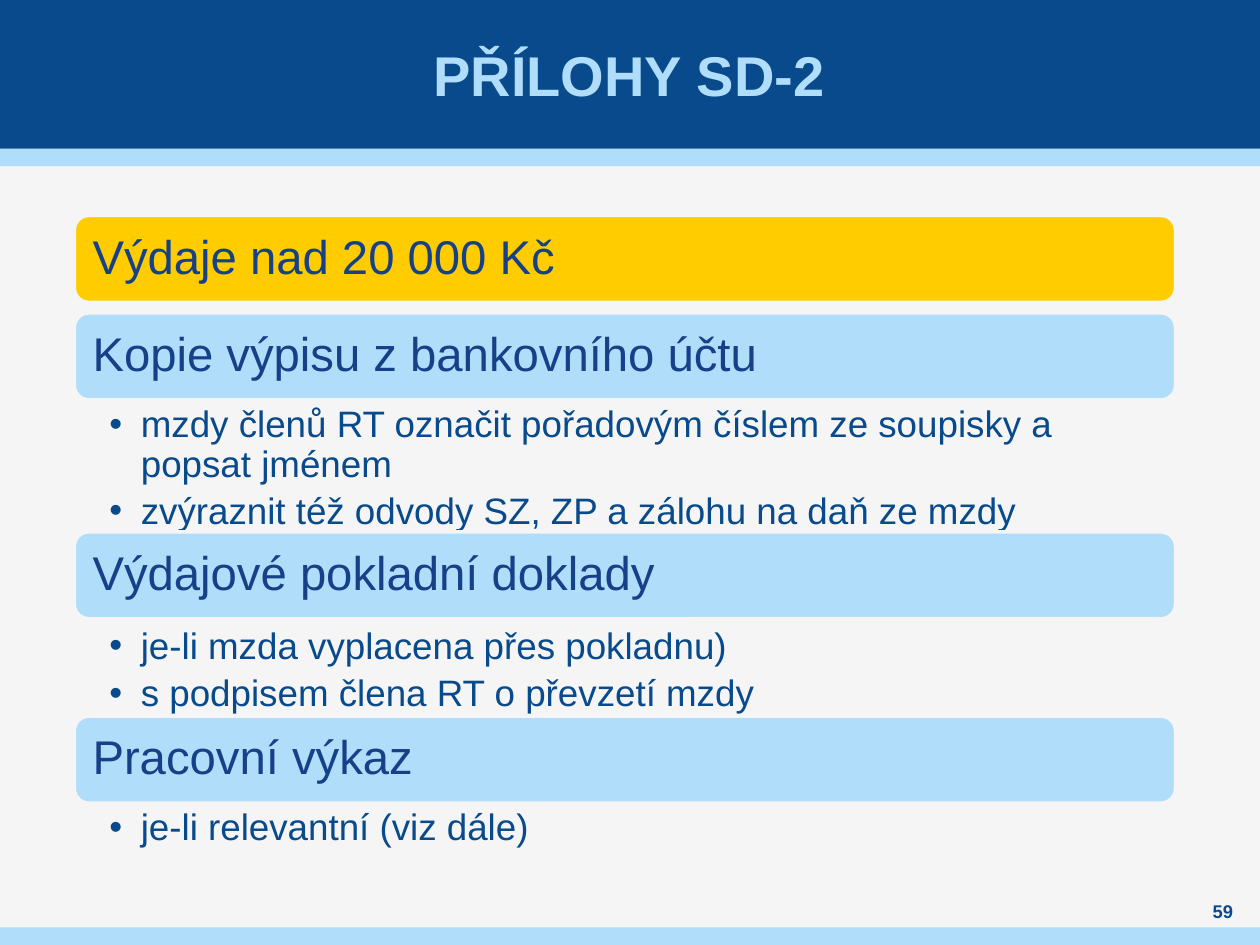
from dataclasses import dataclass

from lxml.etree import SubElement
from pptx import Presentation
from pptx.dml.color import RGBColor
from pptx.enum.shapes import MSO_SHAPE as Shape
from pptx.enum.text import MSO_ANCHOR as Anchor, PP_ALIGN as Align
from pptx.oxml.ns import qn
from pptx.util import Pt


@dataclass(frozen=True)
class Theme:
    paper: str = "F5F5F5"
    navy: str = "084A8B"
    sky: str = "AFDDFA"
    yellow: str = "FFCC00"
    heading: str = "164088"
    font: str = "Arial"
    title_size: float = 32
    heading_size: float = 27
    bullet_size: float = 21
    number_size: float = 10.5


THEME = Theme()
WIDTH, HEIGHT = 720, 540
TITLE_HEIGHT, STRIPE = 85, 10
LEFT, BAR_WIDTH, BAR_HEIGHT = 42.5, 629.3, 49.7

# heading, bar colour, bar top, bullet top, bullet height, bullets
SECTIONS = [
    ("Výdaje nad 20 000 Kč", THEME.yellow, 123.1, 0, 0, []),
    ("Kopie výpisu z bankovního účtu", THEME.sky, 178.8, 229, 77, [
        "mzdy členů RT označit pořadovým číslem ze soupisky a popsat jménem",
        "zvýraznit též odvody SZ, ZP a zálohu na daň ze mzdy",
    ]),
    ("Výdajové pokladní doklady", THEME.sky, 303.9, 355.7, 54, [
        "je-li mzda vyplacena přes pokladnu)",
        "s podpisem člena RT o převzetí mzdy",
    ]),
    ("Pracovní výkaz", THEME.sky, 409.2, 459.4, 35, [
        "je-li relevantní (viz dále)",
    ]),
]


def set_values(target, values):
    for name, value in values.items():
        setattr(target, name, value)


def add_block(page, kind, bounds, fill, outline=None):
    block = page.shapes.add_shape(kind, *map(Pt, bounds))
    block.shadow.inherit = False
    block.fill.solid()
    block.fill.fore_color.rgb = RGBColor.from_string(fill)
    if outline:
        block.line.color.rgb = RGBColor.from_string(outline)
        block.line.width = Pt(2)
    else:
        block.line.fill.background()
    return block


def set_up_frame(frame, insets, anchor):
    """Set wrapping, anchor and the left, top, right and bottom insets."""
    sides = ("margin_left", "margin_top", "margin_right", "margin_bottom")
    set_values(frame, dict(zip(sides, map(Pt, insets))))
    set_values(frame, {"word_wrap": True, "vertical_anchor": anchor})


def write_para(para, text, size, colour, bold=False, **layout):
    set_values(para, layout)
    span = para.add_run()
    span.text = text
    set_values(span.font, {"name": THEME.font, "size": Pt(size), "bold": bold})
    span.font.color.rgb = RGBColor.from_string(colour)


def add_bullet_mark(para):
    props = para._p.get_or_add_pPr()
    props.set("marL", str(Pt(18)))
    props.set("indent", str(-Pt(18)))
    SubElement(props, qn("a:buFont")).set("typeface", THEME.font)
    SubElement(props, qn("a:buChar")).set("char", "•")


def add_label(page, bounds, text, size, colour):
    """Add a bold text box, centred both ways."""
    box = page.shapes.add_textbox(*map(Pt, bounds))
    set_up_frame(box.text_frame, (0, 0, 0, 0), Anchor.MIDDLE)
    write_para(box.text_frame.paragraphs[0], text, size, colour,
               bold=True, alignment=Align.CENTER)


def add_heading_bar(page, text, fill, top):
    bar = add_block(page, Shape.ROUNDED_RECTANGLE,
                    (LEFT, top, BAR_WIDTH, BAR_HEIGHT), fill, THEME.paper)
    set_up_frame(bar.text_frame, (8, 8, 8, 8), Anchor.MIDDLE)
    write_para(bar.text_frame.paragraphs[0], text, THEME.heading_size,
               THEME.heading, alignment=Align.LEFT, line_spacing=0.9)


def add_bullets(page, items, top, height):
    box = page.shapes.add_textbox(*map(Pt, (LEFT, top, BAR_WIDTH, height)))
    frame = box.text_frame
    set_up_frame(frame, (20, 3, 15, 3), Anchor.TOP)
    for index, item in enumerate(items):
        para = frame.add_paragraph() if index else frame.paragraphs[0]
        write_para(para, item, THEME.bullet_size, THEME.navy, level=1,
                   line_spacing=0.9, space_after=Pt(4.2))
        add_bullet_mark(para)


def add_backdrop(page):
    page.background.fill.solid()
    page.background.fill.fore_color.rgb = RGBColor.from_string(THEME.paper)
    for top, height, fill in (
        (TITLE_HEIGHT, STRIPE, THEME.sky),
        (0, TITLE_HEIGHT, THEME.navy),
        (HEIGHT - STRIPE, STRIPE, THEME.sky),
    ):
        add_block(page, Shape.RECTANGLE, (0, top, WIDTH, height), fill)


def main():
    deck = Presentation()
    set_values(deck, {"slide_width": Pt(WIDTH), "slide_height": Pt(HEIGHT)})
    page = deck.slides.add_slide(deck.slide_layouts[6])
    add_backdrop(page)
    add_label(page, (28, 0, 663, TITLE_HEIGHT), "PŘÍLOHY SD-2",
              THEME.title_size, THEME.sky)
    for heading, fill, bar_top, list_top, list_height, items in SECTIONS:
        add_heading_bar(page, heading, fill, bar_top)
        if items:
            add_bullets(page, items, list_top, list_height)
    add_label(page, (680.4, 513.4, 36.7, 14.4), "59",
              THEME.number_size, THEME.navy)
    deck.save("out.pptx")


if __name__ == "__main__":
    main()
